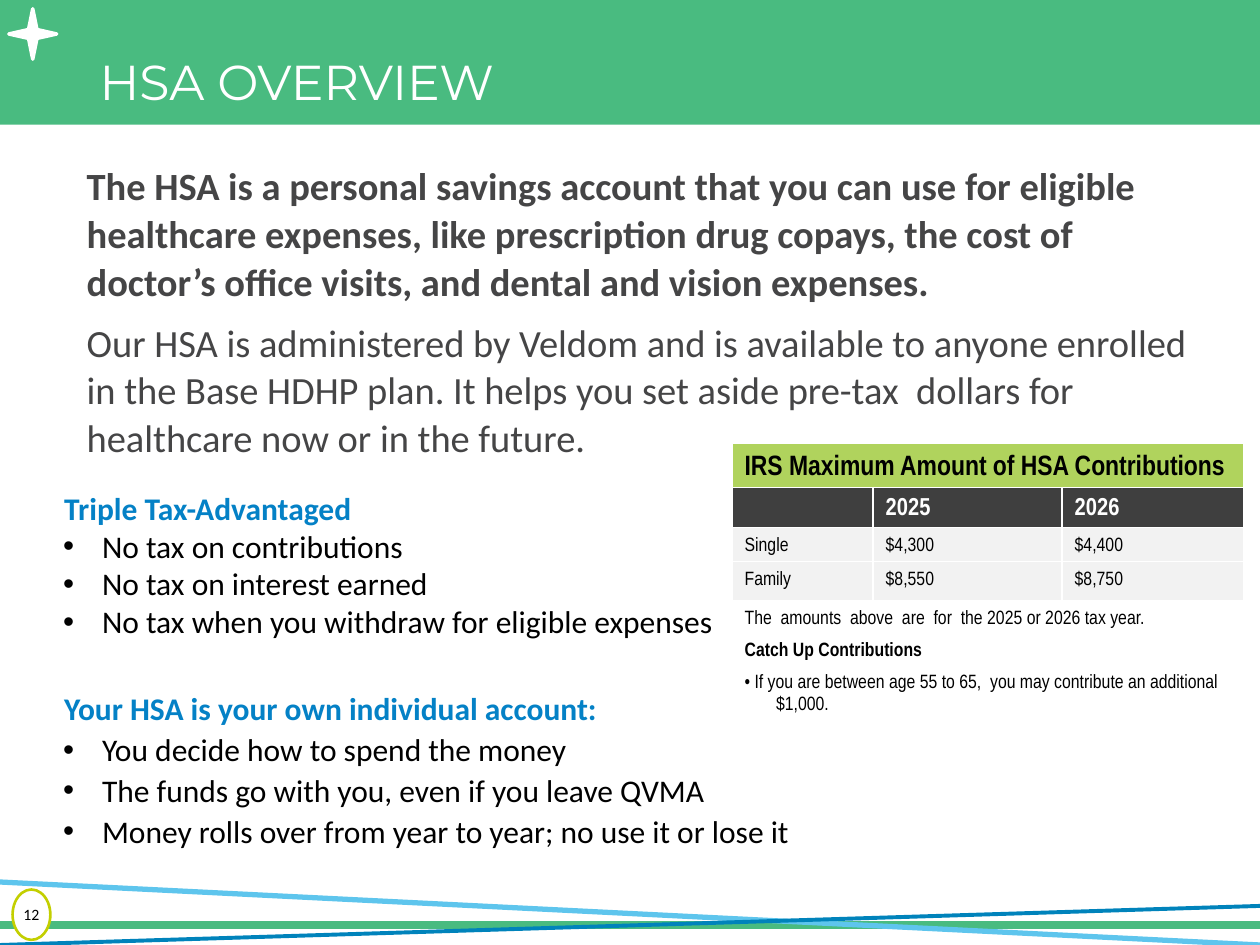
from lxml.etree import SubElement
from pptx import Presentation
from pptx.dml.color import RGBColor
from pptx.enum.shapes import MSO_CONNECTOR, MSO_SHAPE
from pptx.enum.text import MSO_ANCHOR, MSO_AUTO_SIZE, PP_ALIGN
from pptx.oxml.ns import qn
from pptx.util import Inches, Pt

W, H = 10, 7.5
GREEN, SKY, BLUE, LIME = "49BB80", "5EC5ED", "0083BB", "C3CF00"
WHITE, BLACK, GREY, HEAD = "FFFFFF", "000000", "454546", "0481C6"

TITLE = "HSA OVERVIEW"
NUMBER = "12"
INTRO = [
    ("The HSA is a personal savings account that you can use for eligible "
     "healthcare expenses, like prescription drug copays, the cost of "
     "doctor’s office visits, and dental and vision expenses.", True),
    ("Our HSA is administered by Veldom and is available to anyone enrolled "
     "in the Base HDHP plan. It helps you set aside pre-tax  dollars for "
     "healthcare now or in the future.", False),
]
# Each list: box, space before items, heading, items
LISTS = [
    ((0.4, 3.83, 5.42, 1.31), 0, "Triple Tax-Advantaged",
     ["No tax on contributions", "No tax on interest earned",
      "No tax when you withdraw for eligible expenses"]),
    ((0.4, 5.42, 6.08, 1.4), 1.8, "Your HSA is your own individual account:",
     ["You decide how to spend the money",
      "The funds go with you, even if you leave QVMA",
      "Money rolls over from year to year; no use it or lose it"]),
]
CAPTION = "IRS Maximum Amount of HSA Contributions"
LIMITS = [("", "2025", "2026"),
          ("Single", "$4,300", "$4,400"),
          ("Family", "$8,550", "$8,750")]
NOTES = [
    ("The  amounts  above  are  for  the 2025 or 2026 tax year.", False),
    ("Catch Up Contributions", True),
    ("• If you are between age 55 to 65,  you may contribute an additional "
     "$1,000.", False),
]
COLS = (1.12, 1.5, 1.44)
ROWS = (0.31, 0.29, 0.27, 0.31, 1.18)
# Rules behind the page foot: start, end, colour, weight
RULES = [((0, 7.34), (W, 7.34), GREEN, 4.5),
         ((W, H), (0, 7), SKY, 3),
         ((0, H), (W, 7.19), BLUE, 2.25)]


def rgb(code):
    return RGBColor.from_string(code)


def inch(*sizes):
    return [Inches(s) for s in sizes]


def style(par, name, size, color, bold=False):
    font = par.font
    font.name, font.size, font.bold = name, Pt(size), bold
    font.color.rgb = rgb(color)


def indent(par, left, first=0, bullet=None):
    props = par._p.get_or_add_pPr()
    props.set("marL", str(Inches(left)))
    props.set("indent", str(Inches(first)))
    if bullet:
        SubElement(props, qn("a:buFont"), typeface="Arial")
        SubElement(props, qn("a:buChar"), char=bullet)
    else:
        SubElement(props, qn("a:buNone"))


def fill_frame(frame, texts):
    """Write one paragraph per text and return the paragraphs."""
    frame.word_wrap = True
    for i, text in enumerate(texts):
        par = frame.paragraphs[0] if i == 0 else frame.add_paragraph()
        par.text = text
    return frame.paragraphs


def place(shape, box):
    shape.left, shape.top, shape.width, shape.height = inch(*box)


def add_shape(slide, kind, box, fill, line=None, weight=1):
    shape = slide.shapes.add_shape(kind, *inch(*box))
    shape.shadow.inherit = False
    shape.fill.solid()
    shape.fill.fore_color.rgb = rgb(fill)
    if line:
        shape.line.color.rgb = rgb(line)
        shape.line.width = Pt(weight)
    else:
        shape.line.fill.background()
    return shape


def add_rule(slide, start, end, color, weight):
    rule = slide.shapes.add_connector(MSO_CONNECTOR.STRAIGHT,
                                      *inch(*start, *end))
    rule.line.color.rgb = rgb(color)
    rule.line.width = Pt(weight)
    SubElement(rule._element.spPr, qn("a:effectLst"))


def paint(cell, fill):
    """Give a cell white edges and a solid fill."""
    props = cell._tc.get_or_add_tcPr()
    for side in ("lnL", "lnR", "lnT", "lnB"):
        edge = SubElement(props, qn("a:" + side), w=str(Pt(1)))
        solid = SubElement(edge, qn("a:solidFill"))
        SubElement(solid, qn("a:srgbClr"), val=WHITE)
    cell.fill.solid()
    cell.fill.fore_color.rgb = rgb(fill)


def write(cell, items, size, color):
    pars = fill_frame(cell.text_frame, [text for text, _ in items])
    for par, (_, bold) in zip(pars, items):
        par.line_spacing, par.space_after = 1.19, Pt(6)
        style(par, "Arial Narrow", size, color, bold)
    return pars


def add_limits(slide):
    frame = slide.shapes.add_table(len(ROWS), len(COLS), *inch(
        5.81, 3.52, sum(COLS), sum(ROWS)))
    table = frame.table
    table.first_row = table.horz_banding = False
    for col, width in zip(table.columns, COLS):
        col.width = Inches(width)
    for row, height in zip(table.rows, ROWS):
        row.height = Inches(height)
    last = len(ROWS) - 1
    fills = ["B0D35D", "3F3F3F", "F2F2F2", "F2F2F2", WHITE]
    for r, fill in enumerate(fills):
        for cell in table.rows[r].cells:
            paint(cell, fill)
    for r in (0, last):
        table.cell(r, 0).merge(table.cell(r, len(COLS) - 1))
    write(table.cell(0, 0), [(CAPTION, True)], 16, BLACK)
    for r, values in enumerate(LIMITS, 1):
        size, color = (14, WHITE) if r == 1 else (11, BLACK)
        for c, value in enumerate(values):
            write(table.cell(r, c), [(value, r == 1)], size, color)
    notes = write(table.cell(last, 0), NOTES, 11, BLACK)
    indent(notes[-1], 0.25, -0.25)


def main():
    deck = Presentation()
    deck.slide_width, deck.slide_height = inch(W, H)
    slide = deck.slides.add_slide(deck.slide_layouts[3])
    title, *bodies = slide.placeholders
    tree = slide.shapes._spTree

    # Banner, foot rules and star
    add_shape(slide, MSO_SHAPE.RECTANGLE, (0, 0, W, 0.99), GREEN)
    for rule in RULES:
        add_rule(slide, *rule)
    star = add_shape(slide, MSO_SHAPE.STAR_4_POINT, (0.07, 0.07, 0.38, 0.4),
                     WHITE, WHITE, 2)
    star.adjustments[0] = 0.125

    # Title, raised above the banner
    tree.append(title._element)
    place(title, (0.69, 0.4, 8.62, 0.55))
    frame = title.text_frame
    frame.auto_size = MSO_AUTO_SIZE.NONE
    frame.vertical_anchor = MSO_ANCHOR.MIDDLE
    par = fill_frame(frame, [TITLE])[0]
    par.alignment, par.line_spacing = PP_ALIGN.LEFT, 0.9
    style(par, "Montserrat", 28, WHITE)

    # Page number
    badge = add_shape(slide, MSO_SHAPE.OVAL, (0.1, 7.06, 0.3, 0.4),
                      WHITE, LIME, 1.5)
    frame = badge.text_frame
    frame.margin_left = frame.margin_right = 0
    frame.margin_top = frame.margin_bottom = 0
    frame.vertical_anchor = MSO_ANCHOR.MIDDLE
    par = fill_frame(frame, [NUMBER])[0]
    par.alignment = PP_ALIGN.CENTER
    style(par, "Calibri", 9, BLACK)

    add_limits(slide)

    # Introduction
    box = slide.shapes.add_textbox(*inch(0.59, 1.23, 9.1, 2.47))
    pars = fill_frame(box.text_frame, [text for text, _ in INTRO])
    for i, (par, (_, bold)) in enumerate(zip(pars, INTRO)):
        par.line_spacing, par.space_after = 1.03, Pt(6)
        par.space_before = Pt(1.8 if i else 0)
        style(par, "Calibri", 22, GREY, bold)

    # Headed lists
    for body, (box, gap, head, items) in zip(bodies, LISTS):
        tree.append(body._element)
        place(body, box)
        body.text_frame.auto_size = MSO_AUTO_SIZE.NONE
        pars = fill_frame(body.text_frame, [head] + items)
        for i, par in enumerate(pars):
            par.space_before = Pt(gap if i else 0)
            if i:
                indent(par, 0.31, -0.31, "•")
            else:
                indent(par, 0.01)
            style(par, "Calibri", 18, BLACK if i else HEAD, i == 0)

    deck.save("out.pptx")


if __name__ == "__main__":
    main()
